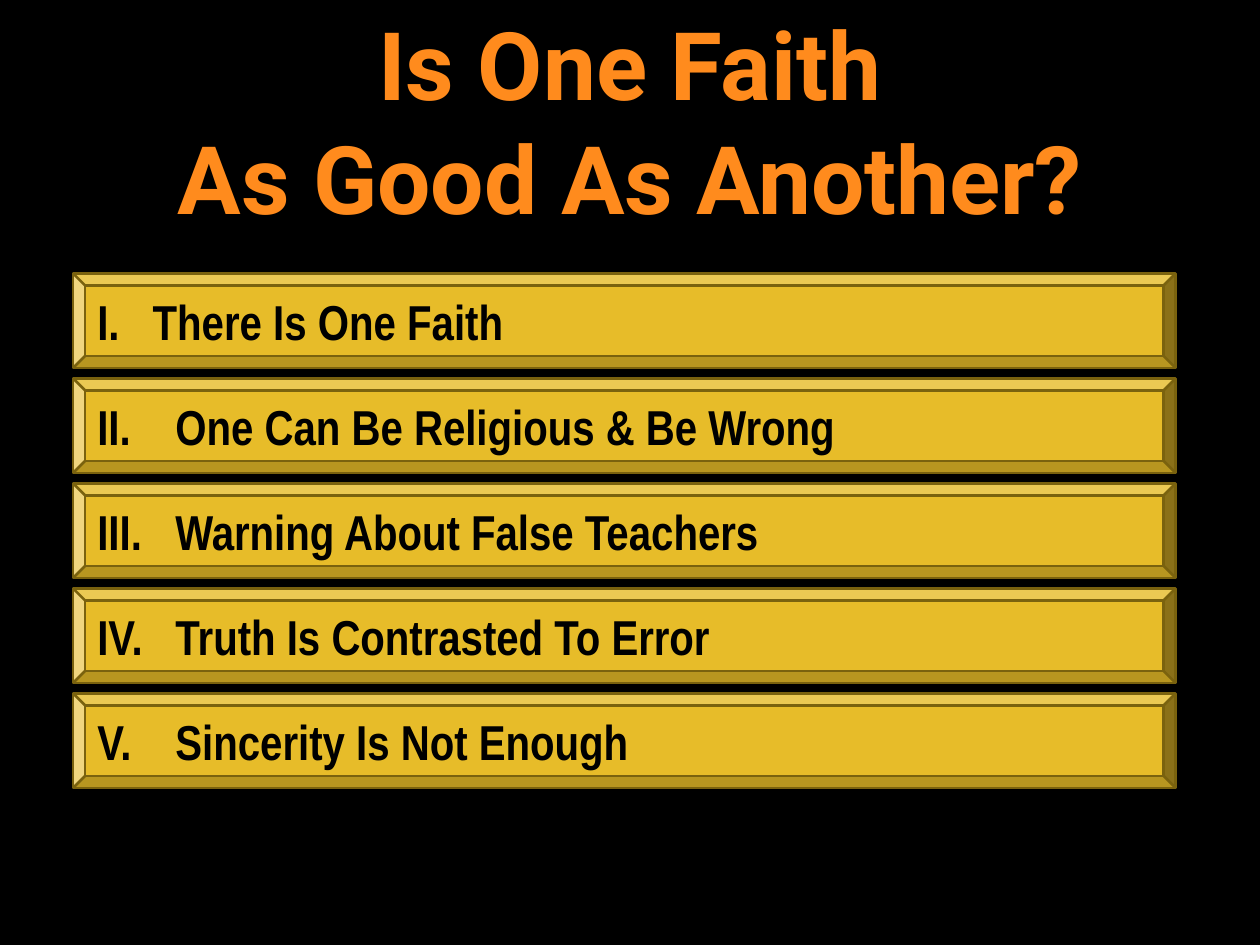
from dataclasses import dataclass

from lxml.etree import SubElement
from pptx import Presentation
from pptx.dml.color import RGBColor
from pptx.enum.shapes import MSO_SHAPE
from pptx.enum.text import MSO_ANCHOR, MSO_AUTO_SIZE, PP_ALIGN
from pptx.oxml.ns import qn
from pptx.slide import Slide
from pptx.text.text import _Paragraph as Paragraph
from pptx.util import Inches, Pt

BLACK = "000000"
ORANGE = "FF8B1D"
GOLD = "E7BC29"
DARK_GOLD = "7A620E"

BAR_LEFT, BAR_TOP = 0.58, 2.17
BAR_WIDTH, BAR_HEIGHT = 8.75, 0.75
BAR_STEP = 5 / 6


@dataclass(frozen=True)
class Point:
    number: int
    wording: str
    indent: float = 0.62


POINTS = [
    Point(1, "There Is One Faith", indent=0.44),
    Point(2, "One Can Be Religious & Be Wrong"),
    Point(3, "Warning About False Teachers"),
    Point(4, "Truth Is Contrasted To Error"),
    Point(5, "Sincerity Is Not Enough"),
]


def color(value: str) -> RGBColor:
    return RGBColor.from_string(value)


def style(paragraph: Paragraph, font: str, size: int, ink: str, align: PP_ALIGN) -> None:
    paragraph.alignment = align
    for run in paragraph.runs:
        run.font.name = font
        run.font.size = Pt(size)
        run.font.bold = True
        run.font.color.rgb = color(ink)


def number_with_roman(paragraph: Paragraph, start: int, indent: float) -> None:
    """Give the paragraph a hanging automatic Roman numeral."""
    properties = paragraph._p.get_or_add_pPr()
    properties.set("marL", str(Inches(indent)))
    properties.set("indent", str(-Inches(indent)))
    numeral = SubElement(properties, qn("a:buAutoNum"), type="romanUcPeriod")
    if start > 1:
        numeral.set("startAt", str(start))


def add_title(slide: Slide, wording: str) -> None:
    title = slide.shapes.title
    title.left, title.top = Inches(0), Inches(0)
    title.width, title.height = Inches(10), Inches(1.92)
    frame = title.text_frame
    frame.text = wording
    frame.auto_size = MSO_AUTO_SIZE.NONE
    frame.vertical_anchor = MSO_ANCHOR.TOP
    for line in frame.paragraphs:
        style(line, "Roboto", 54, ORANGE, PP_ALIGN.CENTER)


def add_bar(slide: Slide, point: Point) -> None:
    top = BAR_TOP + (point.number - 1) * BAR_STEP
    bar = slide.shapes.add_shape(
        MSO_SHAPE.BEVEL, Inches(BAR_LEFT), Inches(top), Inches(BAR_WIDTH), Inches(BAR_HEIGHT)
    )
    bar.shadow.inherit = False
    bar.fill.solid()
    bar.fill.fore_color.rgb = color(GOLD)
    bar.line.color.rgb = color(DARK_GOLD)
    bar.line.width = Pt(1.5)
    frame = bar.text_frame
    frame.text = point.wording
    frame.vertical_anchor = MSO_ANCHOR.MIDDLE
    heading = frame.paragraphs[0]
    style(heading, "Arial Narrow", 28, BLACK, PP_ALIGN.LEFT)
    number_with_roman(heading, point.number, point.indent)


def main() -> None:
    deck = Presentation()
    deck.slide_width, deck.slide_height = Inches(10), Inches(7.5)
    slide = deck.slides.add_slide(deck.slide_layouts.get_by_name("Title Only"))
    slide.background.fill.solid()
    slide.background.fill.fore_color.rgb = color(BLACK)
    add_title(slide, "Is One Faith\nAs Good As Another?")
    for point in POINTS:
        add_bar(slide, point)
    deck.save("out.pptx")


if __name__ == "__main__":
    main()
